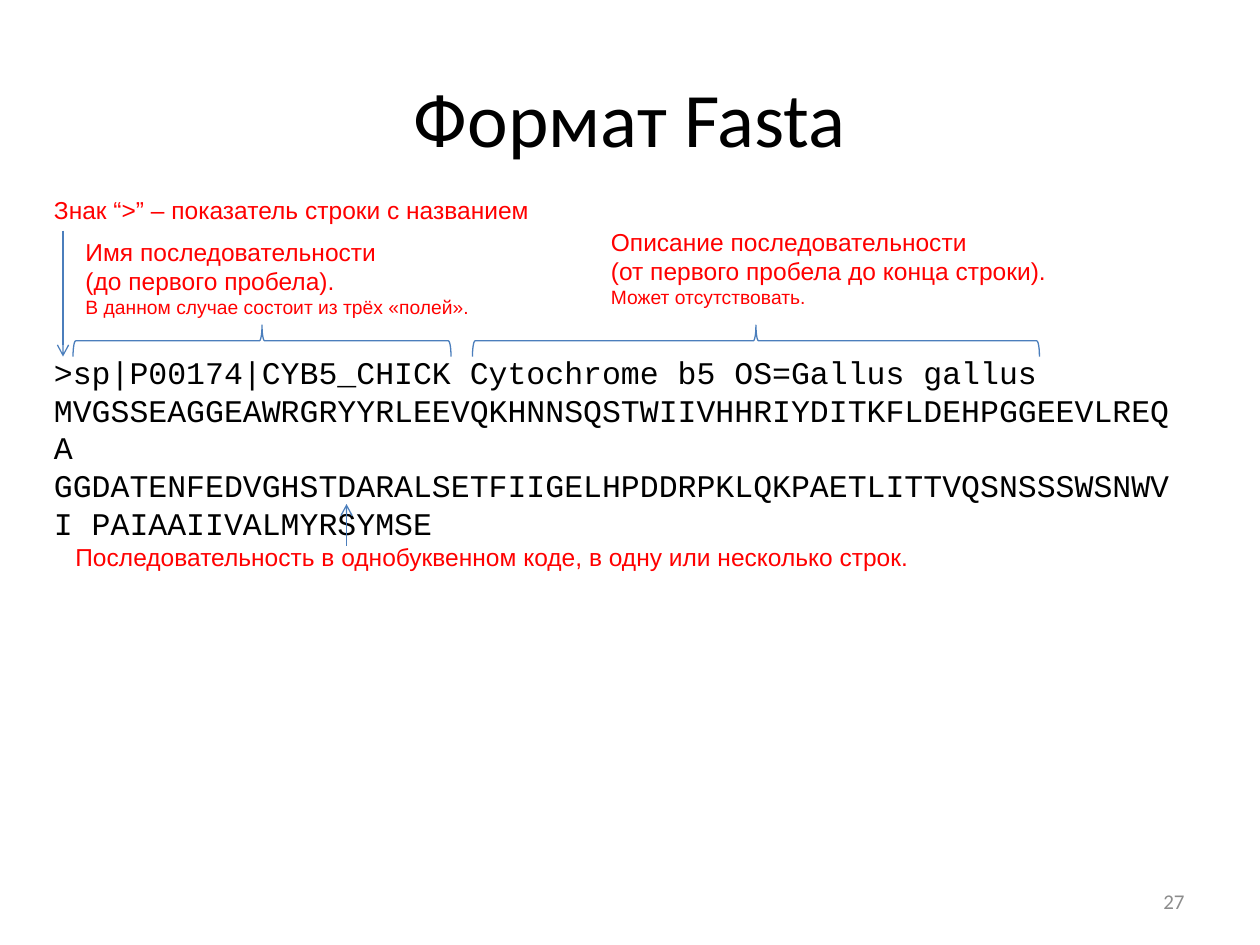
from dataclasses import dataclass

from pptx import Presentation
from pptx.dml.color import RGBColor
from pptx.enum.shapes import MSO_CONNECTOR, MSO_SHAPE
from pptx.enum.text import MSO_ANCHOR, PP_ALIGN
from pptx.oxml.ns import qn
from pptx.slide import Slide
from pptx.util import Inches, Pt
from lxml.etree import SubElement

BLACK = RGBColor(0x00, 0x00, 0x00)
RED = RGBColor(0xFF, 0x00, 0x00)
GRAY = RGBColor(0x8C, 0x8C, 0x8C)
BLUE = RGBColor(0x4B, 0x7E, 0xBC)
LINE_WIDTH = Pt(0.75)
NOTE_SIZE = 14
REMARK_SIZE = 11
BRACE_TOP = 2.58
BRACE_DEPTH = 0.25


@dataclass
class Label:
    left: float
    top: float
    width: float
    height: float
    lines: list[str]
    remark: str = ""
    size: float = NOTE_SIZE
    font: str = "Arial"
    color: RGBColor = RED
    align: PP_ALIGN = PP_ALIGN.LEFT
    anchor: MSO_ANCHOR = MSO_ANCHOR.TOP


@dataclass
class Brace:
    left: float
    width: float


@dataclass
class Arrow:
    x: float
    start: float
    end: float


LABELS = [
    # Title and slide number
    Label(0.5, 0.3, 9, 1.25, ["Формат Fasta"], size=44, font="Calibri",
          color=BLACK, align=PP_ALIGN.CENTER, anchor=MSO_ANCHOR.MIDDLE),
    Label(7.17, 6.95, 2.33, 0.4, ["27"], size=12, font="Calibri",
          color=GRAY, align=PP_ALIGN.RIGHT, anchor=MSO_ANCHOR.MIDDLE),
    # Fasta record
    Label(0.33, 2.75, 9.17, 1.31, [
        ">sp|P00174|CYB5_CHICK Cytochrome b5 OS=Gallus gallus "
        "MVGSSEAGGEAWRGRYYRLEEVQKHNNSQSTWIIVHHRIYDITKFLDEHPGGEEVLREQA "
        "GGDATENFEDVGHSTDARALSETFIIGELHPDDRPKLQKPAETLITTVQSNSSSWSNWVI "
        "PAIAAIIVALMYRSYMSE"], size=18, font="Courier New", color=BLACK),
    # Explanations
    Label(0.33, 1.5, 5.25, 0.34, ["Знак “>” – показатель строки с названием"]),
    Label(0.58, 1.83, 3.25, 0.76,
          ["Имя последовательности", "(до первого пробела)."],
          "В данном случае состоит из трёх «полей»."),
    Label(4.75, 1.75, 3.75, 0.76,
          ["Описание последовательности", "(от первого пробела до конца строки)."],
          "Может отсутствовать."),
    Label(0.5, 4.25, 8.42, 0.34,
          ["Последовательность в однобуквенном коде, в одну или несколько строк."]),
]
BRACES = [Brace(0.58, 3), Brace(3.75, 4.5)]
ARROWS = [Arrow(0.5, 1.83, 2.83), Arrow(2.75, 4.33, 4)]


def add_label(slide: Slide, label: Label) -> None:
    box = slide.shapes.add_textbox(Inches(label.left), Inches(label.top),
                                   Inches(label.width), Inches(label.height))
    frame = box.text_frame
    frame.word_wrap = True
    frame.vertical_anchor = label.anchor
    paragraph = frame.paragraphs[0]
    paragraph.alignment = label.align
    paragraph.font.name = label.font
    paragraph.font.size = Pt(label.size)
    paragraph.font.color.rgb = label.color
    for index, line in enumerate(label.lines):
        if index:
            paragraph.add_line_break()
        paragraph.add_run().text = line
    if label.remark:
        paragraph.add_line_break()
        run = paragraph.add_run()
        run.text = label.remark
        run.font.size = Pt(REMARK_SIZE)


def add_brace(slide: Slide, brace: Brace) -> None:
    # The upright frame shares its centre with the turned brace
    left = brace.left + (brace.width - BRACE_DEPTH) / 2
    top = BRACE_TOP - (brace.width - BRACE_DEPTH) / 2
    shape = slide.shapes.add_shape(MSO_SHAPE.RIGHT_BRACE, Inches(left), Inches(top),
                                   Inches(BRACE_DEPTH), Inches(brace.width))
    shape.rotation = 270
    shape.shadow.inherit = False
    shape.fill.background()
    shape.line.color.rgb = BLUE
    shape.line.width = LINE_WIDTH


def add_arrow(slide: Slide, arrow: Arrow) -> None:
    connector = slide.shapes.add_connector(
        MSO_CONNECTOR.STRAIGHT, Inches(arrow.x), Inches(arrow.start),
        Inches(arrow.x), Inches(arrow.end))
    connector.line.color.rgb = BLUE
    connector.line.width = LINE_WIDTH
    properties = connector._element.spPr
    SubElement(properties.find(qn("a:ln")), qn("a:tailEnd"), type="arrow")
    SubElement(properties, qn("a:effectLst"))


def main() -> None:
    presentation = Presentation()
    presentation.slide_width = Inches(10)
    presentation.slide_height = Inches(7.5)
    slide = presentation.slides.add_slide(presentation.slide_layouts[6])
    for label in LABELS:
        add_label(slide, label)
    for brace in BRACES:
        add_brace(slide, brace)
    for arrow in ARROWS:
        add_arrow(slide, arrow)
    presentation.save("out.pptx")


if __name__ == "__main__":
    main()
